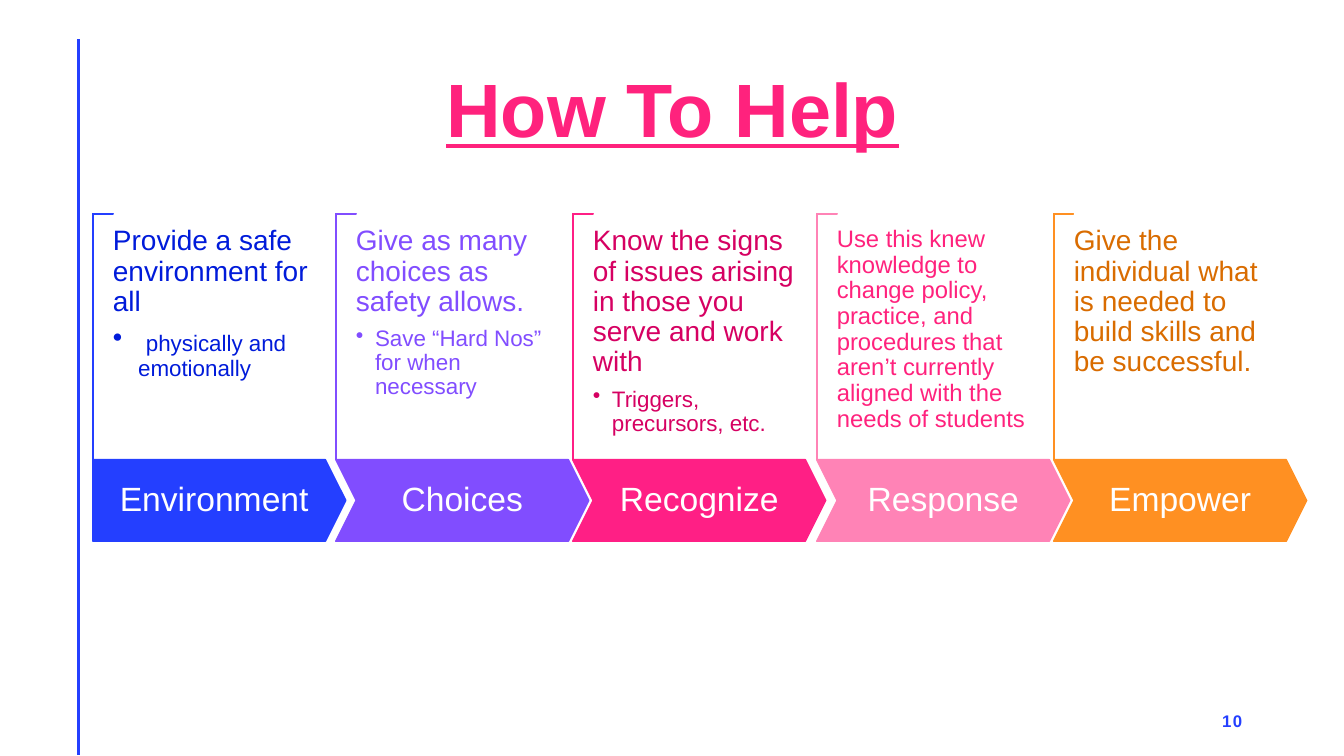
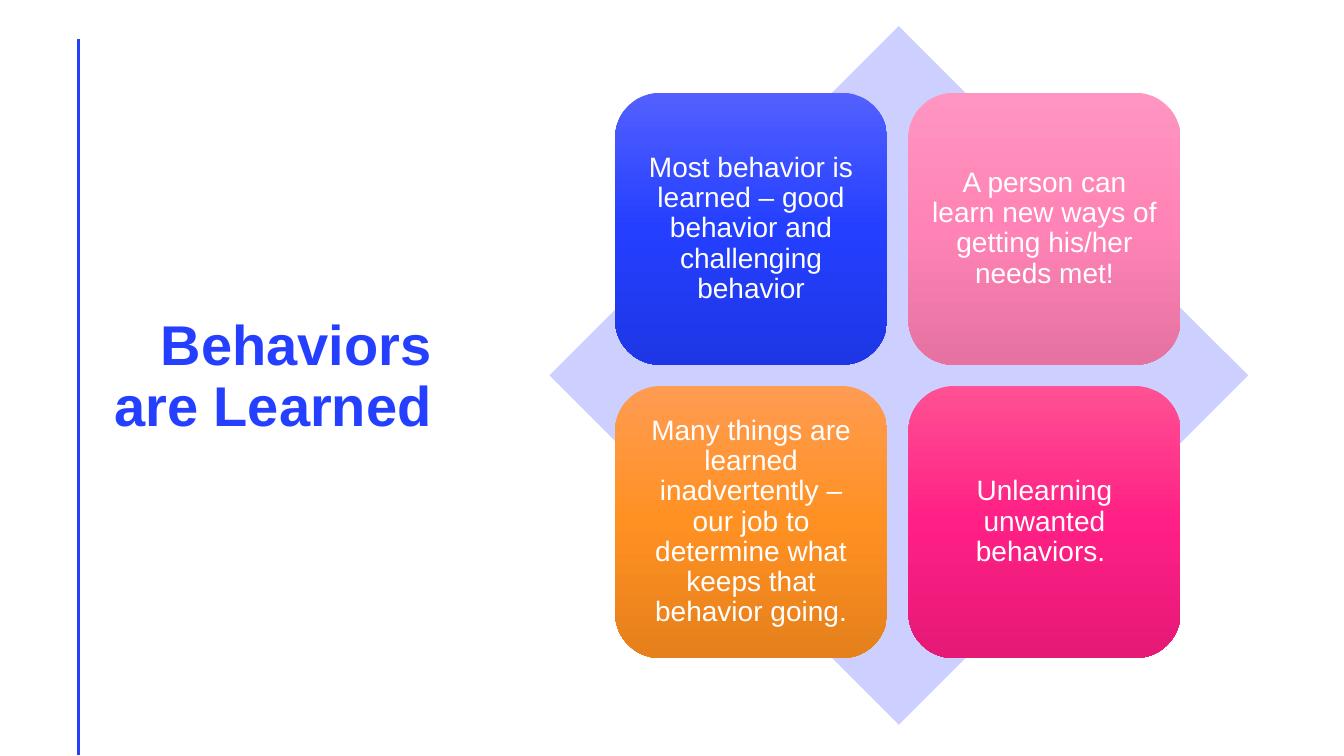
from copy import deepcopy
from dataclasses import dataclass

from lxml.etree import SubElement
from pptx import Presentation
from pptx.dml.color import RGBColor
from pptx.enum.shapes import MSO_CONNECTOR, MSO_SHAPE
from pptx.enum.text import MSO_ANCHOR, MSO_AUTO_SIZE, PP_ALIGN
from pptx.oxml.ns import qn
from pptx.util import Inches, Pt

BLUE, VIOLET, ROSE = "243FFF", "814DFF", "FF1F85"
PINK, ORANGE, HOT = "FF83B6", "FF9022", "FF227D"
WHITE, PALE = "FFFFFF", "CDCFFF"
FONT = "Arial"


@dataclass
class Step:
    left: float
    label: str
    fill: str
    ink: str
    text: str
    size: int = 20
    point: str = ""
    lead: str = ""
    hang: float = 0.19


@dataclass
class Tile:
    text: str
    stops: tuple[str, str, str]


STEPS = [
    Step(0.92, "Environment", BLUE, "001BDA", "Provide a safe environment for all",
         point="physically and emotionally", lead=" ", hang=0.25),
    Step(3.33, "Choices", VIOLET, VIOLET, "Give as many choices as safety allows.",
         point="Save “Hard Nos” for when necessary"),
    Step(5.68, "Recognize", ROSE, "D60062",
         "Know the signs of issues arising in those you serve and work with",
         point="Triggers, precursors, etc."),
    Step(8.1, "Response", PINK, HOT,
         "Use this knew knowledge to change policy, practice, and procedures "
         "that aren’t currently aligned with the needs of students", size=17),
    Step(10.45, "Empower", ORANGE, "D96C00",
         "Give the individual what is needed to build skills and be successful."),
]

TILES = [
    Tile("Most behavior is learned – good behavior and challenging behavior",
         ("5360FF", BLUE, "1E36E5")),
    Tile("A person can learn new ways of getting his/her needs met!",
         ("FF95C0", PINK, "E572A1")),
    Tile("Many things are learned inadvertently – our job to determine what "
         "keeps that behavior going.", ("FF9C52", ORANGE, "E5801C")),
    Tile("Unlearning unwanted behaviors. ", ("FF5193", ROSE, "E51976")),
]


def shade(target, value: str) -> None:
    target.rgb = RGBColor.from_string(value)


def style(run, size: float, ink: str, bold: bool = False) -> None:
    run.font.name = FONT
    run.font.size = Pt(size)
    run.font.bold = bold
    shade(run.font.color, ink)


def write(para, text: str, size: float, ink: str, align=PP_ALIGN.LEFT,
          bold: bool = False, after: float = 0) -> None:
    para.text = text
    para.alignment = align
    para.line_spacing = 0.9
    para.space_after = Pt(after)
    for run in para.runs:
        style(run, size, ink, bold)


def fit(frame, anchor, side: float = 0.1, edge: float = 0.05) -> None:
    frame.word_wrap = True
    frame.auto_size = MSO_AUTO_SIZE.NONE
    frame.vertical_anchor = anchor
    frame.margin_left = frame.margin_right = Inches(side)
    frame.margin_top = frame.margin_bottom = Inches(edge)


def place(shape, left: float, top: float, width: float, height: float) -> None:
    shape.left, shape.top = Inches(left), Inches(top)
    shape.width, shape.height = Inches(width), Inches(height)


def form(slide, kind, box: tuple[float, float, float, float], fill: str = "",
         line: str = ""):
    shape = slide.shapes.add_shape(kind, *map(Inches, box))
    shape.shadow.inherit = False
    if fill:
        shape.fill.solid()
        shade(shape.fill.fore_color, fill)
    if line:
        shade(shape.line.color, line)
        shape.line.width = Pt(1)
    else:
        shape.line.fill.background()
    return shape


def blend(shape, stops: tuple[str, str, str]) -> None:
    shape.fill.gradient()
    shape.fill.gradient_angle = 270
    ramp = shape.element.spPr.find(".//" + qn("a:gsLst"))
    ramp.append(deepcopy(ramp[0]))
    for i, (stop, tint) in enumerate(zip(shape.fill.gradient_stops, stops)):
        stop.position = i / 2
        shade(stop.color, tint)


def head(slide, text: str, box: tuple[float, float, float, float], size: float,
         ink: str, align, anchor):
    title = slide.shapes.title
    place(title, *box)
    fit(title.text_frame, anchor)
    para = title.text_frame.paragraphs[0]
    write(para, text, size, ink, align, bold=True)
    return para.runs[0]


def rule(slide) -> None:
    x = Inches(0.78)
    line = slide.shapes.add_connector(MSO_CONNECTOR.STRAIGHT, x, Inches(0.39), x, Inches(7.49))
    shade(line.line.color, BLUE)
    line.line.width = Pt(2)
    SubElement(line.element.spPr, qn("a:effectLst"))
    slide.slide_layout.shapes.element.append(line.element)


def bullet(para, step: Step) -> None:
    props = para._p.get_or_add_pPr()
    props.set("marL", str(Inches(step.hang)))
    props.set("indent", str(-Inches(step.hang)))
    SubElement(props, qn("a:buChar")).set("char", "•")
    write(para, step.lead or step.point, 20 if step.lead else 16, step.ink, after=2.4)
    if step.lead:
        run = para.add_run()
        run.text = step.point
        style(run, 16, step.ink)


def draw_step(slide, step: Step, first: bool) -> None:
    tall, thin, top = 2.44, 0.2, 2.12
    shift = (tall - thin) / 2
    mark = form(slide, MSO_SHAPE.CORNER, (step.left - shift, top + shift, tall, thin),
                WHITE, step.fill)
    mark.rotation = 90
    mark.adjustments[0] = mark.adjustments[1] = 0.01

    kind = MSO_SHAPE.PENTAGON if first else MSO_SHAPE.CHEVRON
    arrow = form(slide, kind, (step.left, top + tall, 2.51, 0.81), step.fill, step.fill)
    arrow.adjustments[0] = 0.25
    fit(arrow.text_frame, MSO_ANCHOR.MIDDLE, 0.17, 0)
    write(arrow.text_frame.paragraphs[0], step.label, 24, WHITE, PP_ALIGN.CENTER)

    note = slide.shapes.add_textbox(Inches(step.left + thin), Inches(2.25),
                                    Inches(2.04), Inches(1.74)).text_frame
    fit(note, MSO_ANCHOR.TOP, 0, 0)
    write(note.paragraphs[0], step.text, step.size, step.ink, after=7)
    if step.point:
        bullet(note.add_paragraph(), step)


def draw_page(slide, text: str) -> None:
    frame = slide.shapes.add_textbox(Inches(9.42), Inches(6.95),
                                     Inches(3), Inches(0.4)).text_frame
    fit(frame, MSO_ANCHOR.MIDDLE)
    para = frame.paragraphs[0]
    write(para, text, 12, BLUE, PP_ALIGN.RIGHT, bold=True)
    para.line_spacing = 1.0
    para.runs[0].font._element.set("spc", "100")


def draw_tile(slide, tile: Tile, row: int, col: int) -> None:
    side, step = 2.7, 2.91
    card = form(slide, MSO_SHAPE.ROUNDED_RECTANGLE,
                (6.1 + col * step, 0.92 + row * step, side, side))
    blend(card, tile.stops)
    fit(card.text_frame, MSO_ANCHOR.MIDDLE, 0.08, 0.08)
    write(card.text_frame.paragraphs[0], tile.text, 20, WHITE, PP_ALIGN.CENTER)


def help_slide(slide) -> None:
    run = head(slide, "How To Help", (0.92, 0.4, 11.5, 1.45), 54, HOT,
               PP_ALIGN.CENTER, MSO_ANCHOR.MIDDLE)
    run.font.underline = True
    for i, step in enumerate(STEPS):
        draw_step(slide, step, i == 0)
    draw_page(slide, "10")


def learn_slide(slide) -> None:
    head(slide, "Behaviors are Learned", (0.97, 1.78, 3.41, 2.62), 40, BLUE,
         PP_ALIGN.RIGHT, MSO_ANCHOR.BOTTOM)
    form(slide, MSO_SHAPE.DIAMOND, (5.45, 0.26, 6.93, 6.93), PALE)
    for i, tile in enumerate(TILES):
        draw_tile(slide, tile, *divmod(i, 2))


def main() -> None:
    deck = Presentation()
    deck.slide_width, deck.slide_height = Inches(13.33), Inches(7.5)
    plain = deck.slide_layouts[5]
    first = deck.slides.add_slide(plain)
    rule(first)
    help_slide(first)
    learn_slide(deck.slides.add_slide(plain))
    deck.save("out.pptx")


if __name__ == "__main__":
    main()
